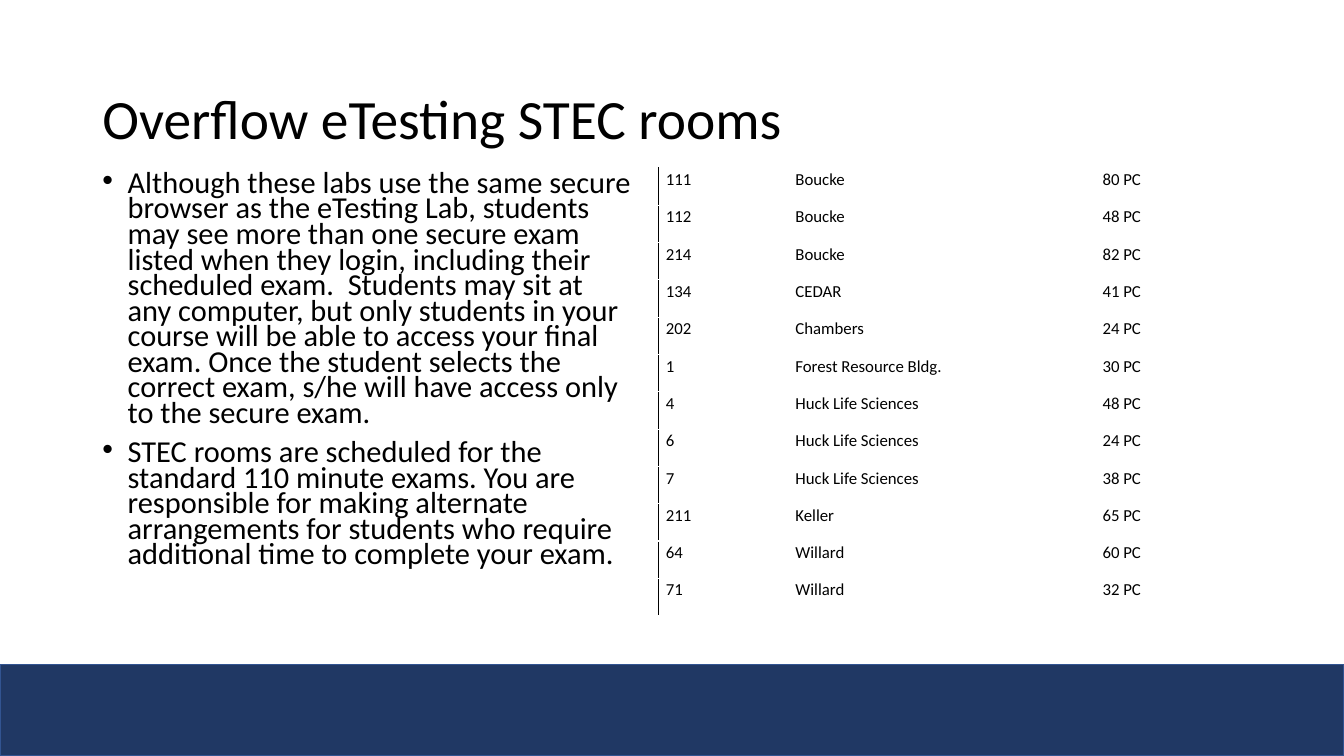
from lxml import etree
from pptx import Presentation
from pptx.dml.color import RGBColor
from pptx.enum.shapes import MSO_SHAPE
from pptx.enum.text import MSO_ANCHOR, MSO_AUTO_SIZE, PP_ALIGN
from pptx.oxml.ns import qn
from pptx.util import Pt

RECTANGLE = MSO_SHAPE.RECTANGLE
TOP, MIDDLE = MSO_ANCHOR.TOP, MSO_ANCHOR.MIDDLE
LEFT = PP_ALIGN.LEFT
NO_AUTOFIT = MSO_AUTO_SIZE.NONE

FONT = "Calibri"
COLORS = {"text": "000000", "band": "203864", "band_line": "325491"}
PAGE_WIDTH, PAGE_HEIGHT = 960, 540
MARGIN_LEFT, CONTENT_TOP = 66, 120
ROW_HEIGHT = 26.5
COLUMN_WIDTHS = [92.6, 219.4, 111.6]

TITLE = "Overflow eTesting STEC rooms"
NOTES_ON_ROOMS = [
    "Although these labs use the same secure browser as the eTesting Lab, "
    "students may see more than one secure exam listed when they login, "
    "including their scheduled exam.  Students may sit at any computer, but "
    "only students in your course will be able to access your final exam. "
    "Once the student selects the correct exam, s/he will have access only "
    "to the secure exam.",
    "STEC rooms are scheduled for the standard 110 minute exams. You are "
    "responsible for making alternate arrangements for students who require "
    "additional time to complete your exam.",
]
ROOMS = [
    ("111", "Boucke", 80),
    ("112", "Boucke", 48),
    ("214", "Boucke", 82),
    ("134", "CEDAR", 41),
    ("202", "Chambers", 24),
    ("1", "Forest Resource Bldg.", 30),
    ("4", "Huck Life Sciences", 48),
    ("6", "Huck Life Sciences", 24),
    ("7", "Huck Life Sciences", 38),
    ("211", "Keller", 65),
    ("64", "Willard", 60),
    ("71", "Willard", 32),
]


def color(name):
    return RGBColor.from_string(COLORS[name])


def place(shape, left, top, width, height):
    shape.left, shape.top = Pt(left), Pt(top)
    shape.width, shape.height = Pt(width), Pt(height)


def style_runs(para, size):
    for span in para.runs:
        span.font.name = FONT
        span.font.size = Pt(size)
        span.font.color.rgb = color("text")


def add_band(page):
    top = 474.5
    band = page.shapes.add_shape(
        RECTANGLE, 0, Pt(top), Pt(PAGE_WIDTH), Pt(PAGE_HEIGHT - top))
    band.shadow.inherit = False
    band.fill.solid()
    band.fill.fore_color.rgb = color("band")
    band.line.color.rgb = color("band_line")
    band.line.width = Pt(1)


def fill_title(box):
    place(box, MARGIN_LEFT, 62, 828, 49)
    frame = box.text_frame
    frame.text = TITLE
    frame.auto_size = NO_AUTOFIT
    frame.vertical_anchor = MIDDLE
    para = frame.paragraphs[0]
    para.alignment = LEFT
    para.line_spacing = 0.9
    style_runs(para, 39.6)


def add_bullet(para, indent):
    properties = para._p.get_or_add_pPr()
    properties.set("marL", str(Pt(indent)))
    properties.set("indent", str(-Pt(indent)))
    etree.SubElement(properties, qn("a:buFont")).set("typeface", "Arial")
    etree.SubElement(properties, qn("a:buChar")).set("char", "•")


def fill_list(box):
    place(box, MARGIN_LEFT, CONTENT_TOP, 392, 328)
    frame = box.text_frame
    frame.text = "\n".join(NOTES_ON_ROOMS)
    frame.auto_size = NO_AUTOFIT
    frame.vertical_anchor = TOP
    for index, para in enumerate(frame.paragraphs):
        add_bullet(para, 18)
        para.alignment = LEFT
        para.line_spacing = 0.7
        para.space_before = Pt(10 if index else 0)
        style_runs(para, 21.7)


def add_left_border(cell):
    line = etree.Element(qn("a:lnL"), w=str(Pt(0.75)))
    fill = etree.SubElement(line, qn("a:solidFill"))
    etree.SubElement(fill, qn("a:srgbClr"), val=COLORS["text"])
    cell._tc.get_or_add_tcPr().insert(0, line)


def fill_cell(cell, text):
    cell.fill.background()
    cell.margin_left, cell.margin_top = Pt(5), Pt(1.2)
    cell.margin_right, cell.margin_bottom = Pt(7.2), Pt(10.8)
    cell.text_frame.text = text
    style_runs(cell.text_frame.paragraphs[0], 12)


def add_room_table(page):
    frame = page.shapes.add_table(
        len(ROOMS), len(COLUMN_WIDTHS), Pt(470.6), Pt(CONTENT_TOP),
        Pt(sum(COLUMN_WIDTHS)), Pt(ROW_HEIGHT * len(ROOMS)))
    table = frame.table
    table.first_row = False
    table.horz_banding = False
    for column, width in zip(table.columns, COLUMN_WIDTHS):
        column.width = Pt(width)
    for row, (room, building, seats) in zip(table.rows, ROOMS):
        row.height = Pt(ROW_HEIGHT)
        for cell, text in zip(row.cells, (room, building, f"{seats} PC")):
            fill_cell(cell, text)
        add_left_border(row.cells[0])


def main():
    deck = Presentation()
    deck.slide_width, deck.slide_height = Pt(PAGE_WIDTH), Pt(PAGE_HEIGHT)
    page = deck.slides.add_slide(deck.slide_layouts[1])

    # Heading and explanation
    fill_title(page.shapes.title)
    fill_list(page.placeholders[1])

    # Rooms and footer band
    add_room_table(page)
    add_band(page)
    deck.save("out.pptx")


if __name__ == "__main__":
    main()
